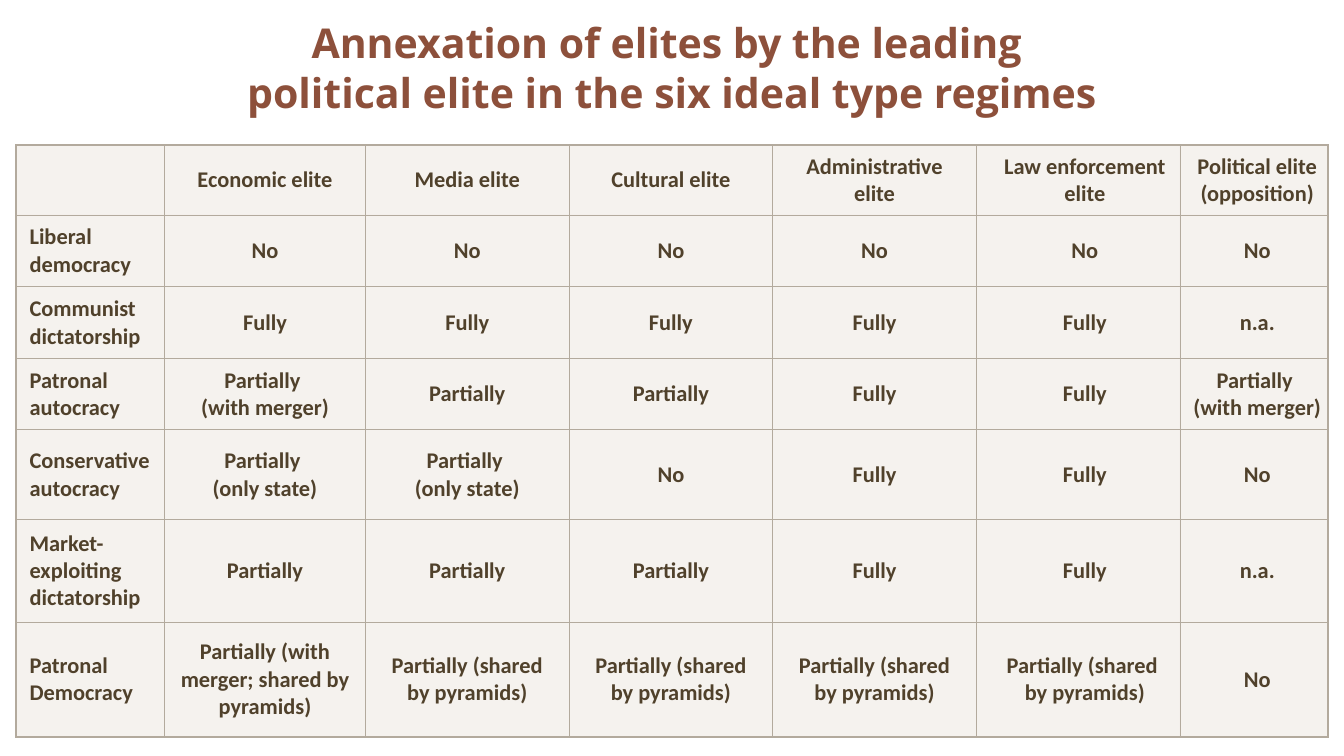
from lxml.etree import SubElement
from pptx import Presentation
from pptx.dml.color import RGBColor
from pptx.enum.text import MSO_ANCHOR, MSO_AUTO_SIZE, PP_ALIGN
from pptx.oxml import parse_xml
from pptx.oxml.ns import nsdecls, qn
from pptx.util import Pt

PX = 4572
RUST = RGBColor(0x8D, 0x50, 0x3B)
BROWN = RGBColor(0x50, 0x41, 0x2B)
SAND = RGBColor(0xEF, 0xEA, 0xE4)
TAUPE = RGBColor(0xB3, 0xAA, 0x9D)
PLAIN = "{2D5ABB26-0587-4C30-8999-92F81FD0307C}"

TITLE = ["Annexation of elites by the leading ",
         "political elite in the six ideal type regimes"]
COLS = [221, 299, 303, 303, 303, 303, 220]
TALL = [104, 107, 107, 106, 134, 152, 171]
INDENT = {5: 20, 6: 10}
MERGER = "Partially \n(with merger)"
STATE = "Partially \n(only state)"
SHARED = "Partially (shared by pyramids)"
ROWS = [
    ["", "Economic elite", "Media elite", "Cultural elite",
     "Administrative elite", "Law enforcement elite",
     "Political elite (opposition)"],
    ["Liberal democracy"] + ["No"] * 6,
    ["Communist dictatorship"] + ["Fully"] * 5 + ["n.a."],
    ["Patronal autocracy", MERGER, "Partially", "Partially", "Fully", "Fully", MERGER],
    ["Conservative autocracy", STATE, STATE, "No", "Fully", "Fully", "No"],
    ["Market-exploiting dictatorship"] + ["Partially"] * 3 + ["Fully"] * 2 + ["n.a."],
    ["Patronal Democracy", "Partially (with merger; shared by pyramids)",
     SHARED, SHARED, SHARED, "Partially (shared \nby pyramids)", "No"],
]


def add_run(para, text, face, size, color):
    """Add one bold run to a paragraph."""
    run = para.add_run()
    run.text = text
    font = run.font
    font.name, font.size, font.bold = face, Pt(size), True
    font.color.rgb = color


def set_title(shape):
    """Place the title and write its two lines."""
    shape.left, shape.top, shape.width, shape.height = 24 * PX, 0, 1952 * PX, 200 * PX
    frame = shape.text_frame
    frame.word_wrap = True
    frame.auto_size = MSO_AUTO_SIZE.NONE
    frame.vertical_anchor = MSO_ANCHOR.MIDDLE
    para = frame.paragraphs[0]
    para.alignment = PP_ALIGN.CENTER
    for num, line in enumerate(TITLE):
        if num:
            para.add_line_break()
        add_run(para, line, "Open Sans", 22, RUST)


def set_edges(cell, row, col):
    """Draw thin inner borders and thicker outer ones."""
    outer = {"L": col == 0, "R": col == len(COLS) - 1,
             "T": row == 0, "B": row == len(TALL) - 1}
    props = cell._tc.get_or_add_tcPr()
    for side, thick in outer.items():
        width = Pt(1 if thick else 0.5)
        props.append(parse_xml(
            f'<a:ln{side} {nsdecls("a")} w="{width}"><a:solidFill>'
            f'<a:srgbClr val="{TAUPE}"/></a:solidFill></a:ln{side}>'))


def set_fill(cell):
    """Fill a cell with translucent sand."""
    cell.fill.solid()
    cell.fill.fore_color.rgb = SAND
    color = cell._tc.tcPr.find(qn("a:solidFill")).find(qn("a:srgbClr"))
    SubElement(color, qn("a:alpha")).set("val", "60000")


def set_text(cell, text, col):
    """Write the lines of a cell, indented in the last two columns."""
    indent = INDENT.get(col, 0)
    cell.vertical_anchor = MSO_ANCHOR.MIDDLE
    cell.margin_left = cell.margin_right = 0 if indent else 20 * PX
    cell.margin_top = cell.margin_bottom = 0 if indent else 10 * PX
    frame = cell.text_frame
    for num, line in enumerate(text.split("\n") if text else []):
        para = frame.add_paragraph() if num else frame.paragraphs[0]
        para.alignment = PP_ALIGN.CENTER if col else PP_ALIGN.LEFT
        if indent:
            para._p.get_or_add_pPr().set("marL", str(indent * PX))
        add_run(para, line, "Calibri", 12, BROWN)


def add_grid(slide):
    """Add the table of regimes and elites."""
    frame = slide.shapes.add_table(len(TALL), len(COLS), 24 * PX, 216 * PX,
                                   sum(COLS) * PX, sum(TALL) * PX)
    table = frame.table
    table.first_row = table.horz_banding = False
    table._tbl.tblPr.find(qn("a:tableStyleId")).text = PLAIN
    for col, width in zip(table.columns, COLS):
        col.width = width * PX
    for row, height in zip(table.rows, TALL):
        row.height = height * PX
    for row, line in enumerate(ROWS):
        for col, text in enumerate(line):
            cell = table.cell(row, col)
            set_edges(cell, row, col)
            set_fill(cell)
            set_text(cell, text, col)


def main():
    """Build and save the slide."""
    deck = Presentation()
    deck.slide_width, deck.slide_height = 2000 * PX, 1125 * PX
    slide = deck.slides.add_slide(deck.slide_layouts[5])
    set_title(slide.shapes.title)
    add_grid(slide)
    deck.save("out.pptx")


if __name__ == "__main__":
    main()
